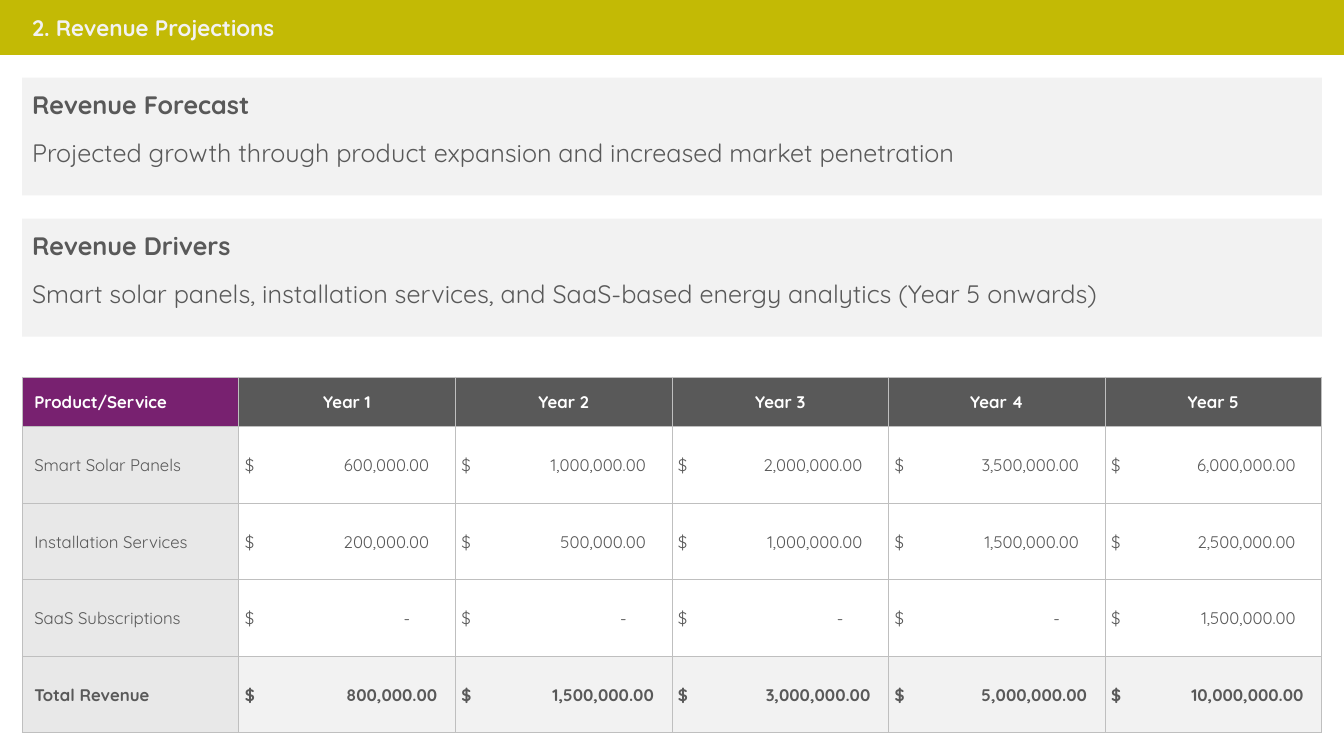
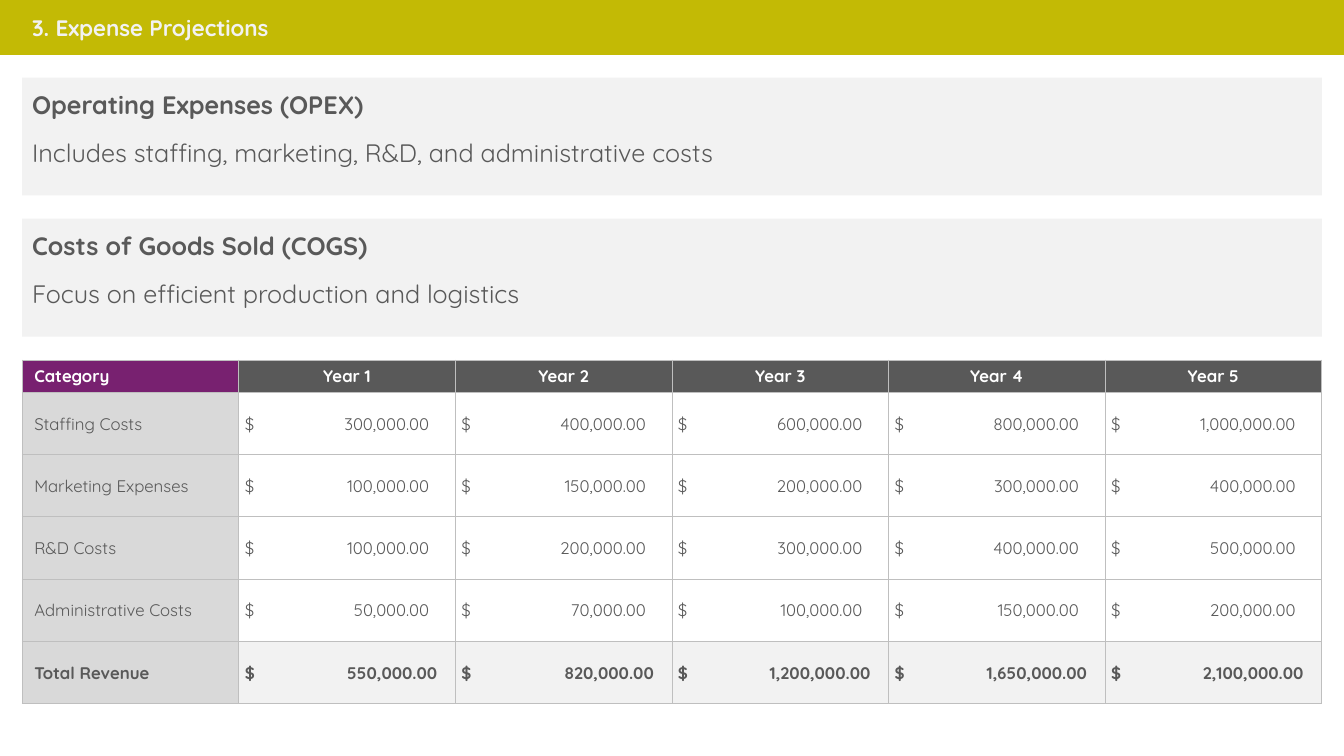
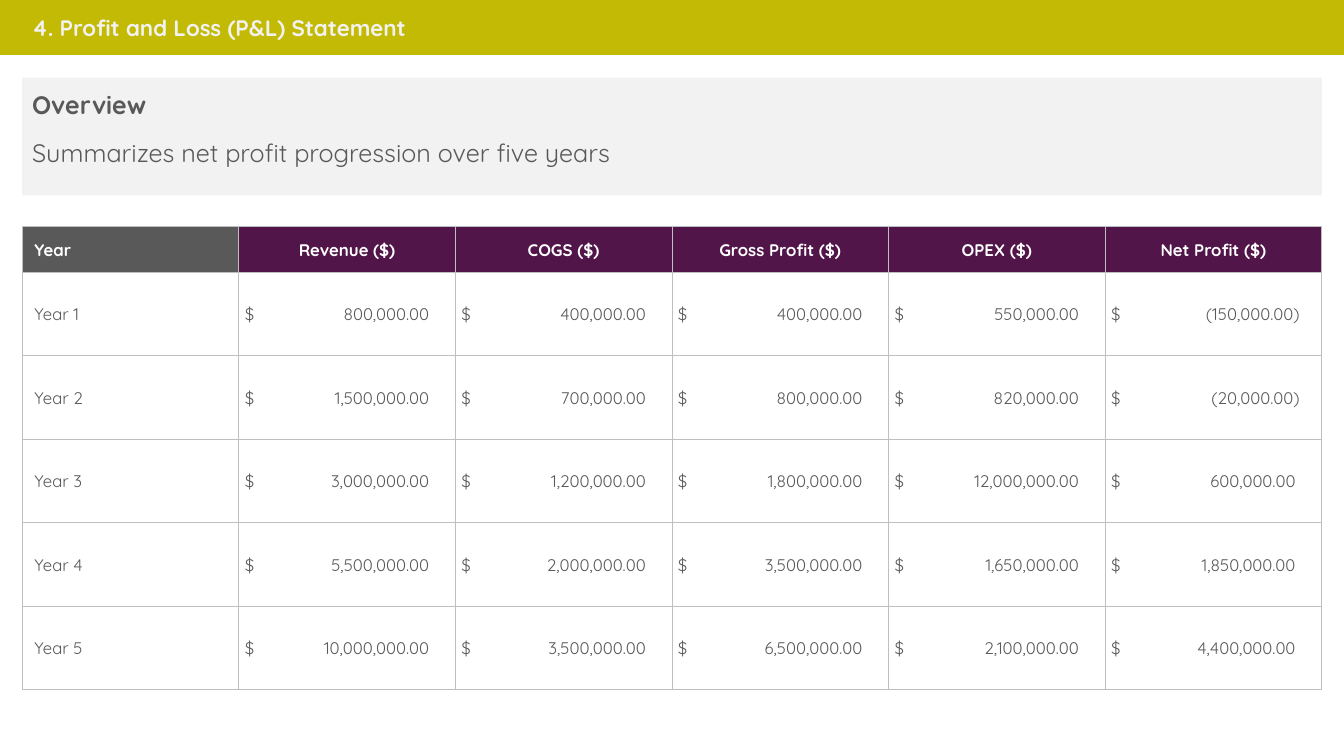
"""Build three financial projection slides with summary panels and tables."""
import lxml.etree
import pptx
import pptx.dml.color
import pptx.enum.shapes
import pptx.enum.text
import pptx.oxml.ns
import pptx.util

RGB = pptx.dml.color.RGBColor
OLIVE = RGB(0xC3, 0xBA, 0x05)
PURPLE = RGB(0x78, 0x21, 0x70)
PLUM = RGB(0x51, 0x15, 0x4A)
CHARCOAL = RGB(0x59, 0x59, 0x59)
RULE_GREY = RGB(0xBF, 0xBF, 0xBF)
MID_GREY = RGB(0xD9, 0xD9, 0xD9)
SOFT_GREY = RGB(0xE8, 0xE8, 0xE8)
PALE_GREY = RGB(0xF2, 0xF2, 0xF2)
WHITE = RGB(0xFF, 0xFF, 0xFF)

FONT = "Quicksand"
SLIDE_WIDTH, SLIDE_HEIGHT = 13.33, 7.5
MARGIN, CONTENT_WIDTH = 0.22, 12.89
BAND_HEIGHT = 0.54
PANEL_TOP, PANEL_HEIGHT, PANEL_PITCH = 0.77, 1.17, 1.4
AMOUNT_TAB, TOTAL_TAB, NEGATIVE_TAB, ZERO_TAB = 1.83, 1.91, 1.87, 1.64
YEARS = [f"Year {number}" for number in range(1, 6)]

SLIDES = [
    {
        "title": "2. Revenue Projections",
        "panels": [
            ("Revenue Forecast",
             "Projected growth through product expansion and increased market penetration"),
            ("Revenue Drivers",
             "Smart solar panels, installation services, and SaaS-based energy analytics (Year 5 onwards)"),
        ],
        "top": 3.74, "height": 3.53, "header_height": 0.49,
        "corner_fill": PURPLE, "header_fill": CHARCOAL, "label_fill": SOFT_GREY,
        "header": ["Product/Service", *YEARS],
        "rows": [
            ("Smart Solar Panels", 600000, 1000000, 2000000, 3500000, 6000000),
            ("Installation Services", 200000, 500000, 1000000, 1500000, 2500000),
            ("SaaS Subscriptions", 0, 0, 0, 0, 1500000),
            ("Total Revenue", 800000, 1500000, 3000000, 5000000, 10000000),
        ],
    },
    {
        "title": "3. Expense Projections",
        "panels": [
            ("Operating Expenses (OPEX)",
             "Includes staffing, marketing, R&D, and administrative costs"),
            ("Costs of Goods Sold (COGS)",
             "Focus on efficient production and logistics"),
        ],
        "top": 3.57, "height": 3.41, "header_height": 0.32,
        "corner_fill": PURPLE, "header_fill": CHARCOAL, "label_fill": MID_GREY,
        "header": ["Category", *YEARS],
        "rows": [
            ("Staffing Costs", 300000, 400000, 600000, 800000, 1000000),
            ("Marketing Expenses", 100000, 150000, 200000, 300000, 400000),
            ("R&D Costs", 100000, 200000, 300000, 400000, 500000),
            ("Administrative Costs", 50000, 70000, 100000, 150000, 200000),
            ("Total Revenue", 550000, 820000, 1200000, 1650000, 2100000),
        ],
    },
    {
        "title": "4. Profit and Loss (P&L) Statement",
        "panels": [("Overview", "Summarizes net profit progression over five years")],
        "top": 2.25, "height": 4.59, "header_height": 0.45,
        "corner_fill": CHARCOAL, "header_fill": PLUM, "label_fill": WHITE,
        "header": ["Year", "Revenue ($)", "COGS ($)", "Gross Profit ($)",
                   "OPEX ($)", "Net Profit ($)"],
        "rows": [
            ("Year 1", 800000, 400000, 400000, 550000, -150000),
            ("Year 2", 1500000, 700000, 800000, 820000, -20000),
            ("Year 3", 3000000, 1200000, 1800000, 12000000, 600000),
            ("Year 4", 5500000, 2000000, 3500000, 1650000, 1850000),
            ("Year 5", 10000000, 3500000, 6500000, 2100000, 4400000),
        ],
    },
]


def inches(*lengths):
    return [pptx.util.Inches(length) for length in lengths]


def add_span(para, text, size, color, bold=False):
    span = para.add_run()
    span.text = text
    span.font.name = FONT
    span.font.size = pptx.util.Pt(size)
    span.font.bold = bold
    span.font.color.rgb = color


def add_text(page, place, text, size, color, bold=False):
    box = page.shapes.add_textbox(*inches(*place))
    box.text_frame.word_wrap = True
    add_span(box.text_frame.paragraphs[0], text, size, color, bold)


def add_rectangle(page, place, color):
    shape = page.shapes.add_shape(
        pptx.enum.shapes.MSO_SHAPE.RECTANGLE, *inches(*place))
    shape.shadow.inherit = False
    shape.fill.solid()
    shape.fill.fore_color.rgb = color
    shape.line.fill.background()
    return shape


def add_title_band(page, title):
    band = add_rectangle(page, (0, 0, SLIDE_WIDTH, BAND_HEIGHT), OLIVE)
    band.line.color.rgb = OLIVE
    band.line.width = pptx.util.Pt(1.5)
    add_text(page, (MARGIN, 0.09, 8.08, 0.37), title, 16, PALE_GREY, True)


def add_panel(page, top, heading, body):
    add_rectangle(page, (MARGIN, top, CONTENT_WIDTH, PANEL_HEIGHT), PALE_GREY)
    add_text(page, (MARGIN, top + 0.07, 6.95, 0.4), heading, 18, CHARCOAL, True)
    add_text(page, (MARGIN, top + 0.54, 11.5, 0.4), body, 18, CHARCOAL)


def add_node(parent, tag, **attributes):
    return lxml.etree.SubElement(parent, pptx.oxml.ns.qn(tag), **attributes)


def format_cell(cell, fill, left_inset):
    cell.vertical_anchor = pptx.enum.text.MSO_ANCHOR.MIDDLE
    cell.margin_left, cell.margin_top, cell.margin_right, cell.margin_bottom = inches(
        left_inset, 0.01, 0.01, 0)
    properties = cell._tc.get_or_add_tcPr()
    for side in ("a:lnL", "a:lnR", "a:lnT", "a:lnB"):
        line = add_node(properties, side, w=str(pptx.util.Pt(0.5)))
        add_node(add_node(line, "a:solidFill"), "a:srgbClr", val=str(RULE_GREY))
    if fill is None:
        cell.fill.background()
    else:
        cell.fill.solid()
        cell.fill.fore_color.rgb = fill


def add_amount(para, value, bold):
    if value == 0:
        amount, stop = "-", ZERO_TAB
    elif value < 0:
        amount, stop = f"({-value:,.2f})", NEGATIVE_TAB
    else:
        amount, stop = f"{value:,.2f}", TOTAL_TAB if bold else AMOUNT_TAB
    tabs = add_node(para._p.get_or_add_pPr(), "a:tabLst")
    add_node(tabs, "a:tab", pos=str(pptx.util.Inches(stop)), algn="r")
    add_span(para, f"$\t{amount}", 12, CHARCOAL, bold)


def add_finance_table(page, content):
    rows = content["rows"]
    columns = len(content["header"])
    table = page.shapes.add_table(
        len(rows) + 1, columns,
        *inches(MARGIN, content["top"], CONTENT_WIDTH, content["height"])).table
    table.first_row = table.horz_banding = False
    for column in table.columns:
        column.width = pptx.util.Inches(CONTENT_WIDTH / columns)
    row_height = (content["height"] - content["header_height"]) / len(rows)
    for index, row in enumerate(table.rows):
        row.height = pptx.util.Inches(row_height if index else content["header_height"])

    for index, text in enumerate(content["header"]):
        cell = table.cell(0, index)
        format_cell(cell, content["header_fill" if index else "corner_fill"],
                    0.01 if index else 0.12)
        para = cell.text_frame.paragraphs[0]
        if index:
            para.alignment = pptx.enum.text.PP_ALIGN.CENTER
        add_span(para, text, 12, WHITE, True)

    for row_index, (label, *values) in enumerate(rows, 1):
        is_total = label.startswith("Total")
        cell = table.cell(row_index, 0)
        format_cell(cell, content["label_fill"], 0.12)
        add_span(cell.text_frame.paragraphs[0], label, 12, CHARCOAL, is_total)
        for column_index, value in enumerate(values, 1):
            cell = table.cell(row_index, column_index)
            format_cell(cell, PALE_GREY if is_total else None, 0.06)
            add_amount(cell.text_frame.paragraphs[0], value, is_total)


def main():
    deck = pptx.Presentation()
    deck.slide_width, deck.slide_height = inches(SLIDE_WIDTH, SLIDE_HEIGHT)
    for content in SLIDES:
        page = deck.slides.add_slide(deck.slide_layouts[6])
        add_title_band(page, content["title"])
        for index, (heading, body) in enumerate(content["panels"]):
            add_panel(page, PANEL_TOP + index * PANEL_PITCH, heading, body)
        add_finance_table(page, content)
    deck.save("out.pptx")


if __name__ == "__main__":
    main()
